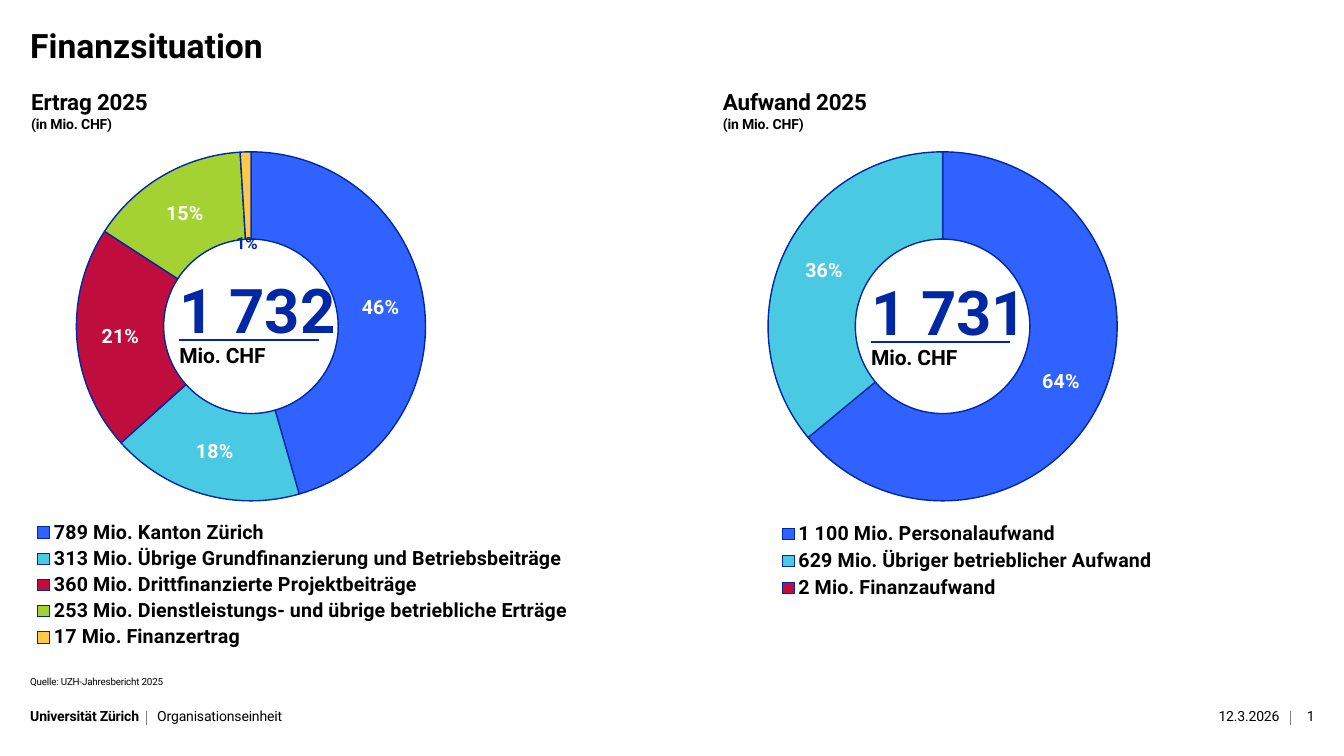
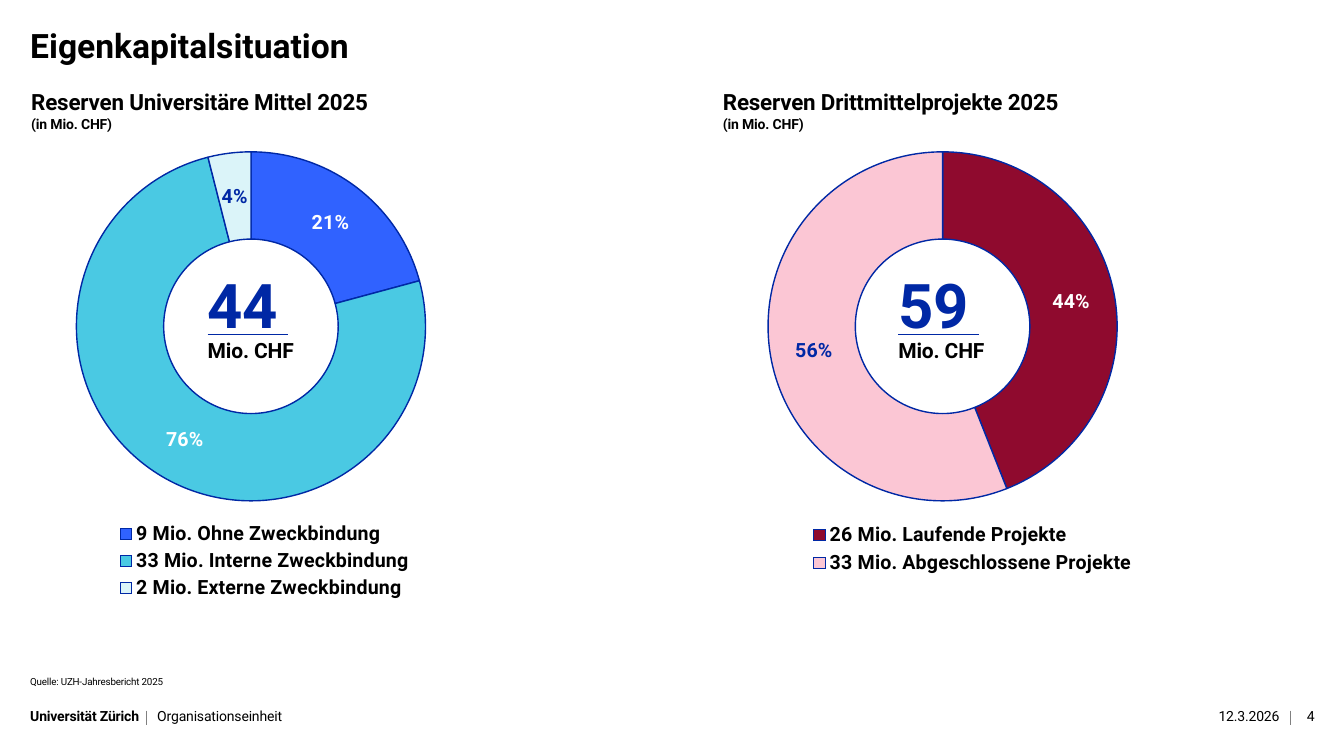
from lxml.etree import SubElement
from pptx import Presentation
from pptx.chart.data import CategoryChartData
from pptx.dml.color import RGBColor
from pptx.enum.chart import XL_CHART_TYPE, XL_LEGEND_POSITION
from pptx.enum.shapes import MSO_CONNECTOR
from pptx.enum.text import PP_ALIGN
from pptx.oxml import parse_xml
from pptx.oxml.ns import nsdecls, qn
from pptx.util import Inches, Pt

FONT = "Roboto"
COLORS = {
    "black": "000000", "white": "FFFFFF", "gray": "808080", "navy": "0028A5",
    "blue": "3062FF", "cyan": "4AC9E3", "ice": "DBF4F9", "red": "BF0D3E",
    "green": "A4D233", "yellow": "FFC845", "wine": "8F0A2E", "pink": "FBC6D4",
}
CHART_W, CHART_H = 5.43, 5.97
PANEL_LEFTS = (0.29, 7.15)
PANEL_TOP = 0.79

SLIDES = [
    {"title": "Finanzsituation", "number": "1", "panels": [
        {"heading": "Ertrag 2025", "total": "1 732", "total_at": (1.49, 1.94), "rule": 1.38,
         "legend": (0, 4.37, 5.43),
         "slices": [("789 Mio. Kanton Zürich", 46, "blue", {}),
                    ("313 Mio. Übrige Grundfinanzierung und Betriebsbeiträge", 18, "cyan", {}),
                    ("360 Mio. Drittfinanzierte Projektbeiträge", 21, "red", {}),
                    ("253 Mio. Dienstleistungs- und übrige betriebliche Erträge", 15, "green", {}),
                    ("17 Mio. Finanzertrag", 1, "yellow",
                     {"color": "navy", "size": 12, "drop": 0.08})]},
        {"heading": "Aufwand 2025", "total": "1 731", "total_at": (1.49, 1.96), "rule": 1.38,
         "legend": (0.48, 4.37, 3.9),
         "slices": [("1 100 Mio. Personalaufwand", 64, "blue", {}),
                    ("629 Mio. Übriger betrieblicher Aufwand", 36, "cyan", {}),
                    ("2 Mio. Finanzaufwand", 0, "red", {"color": "navy", "drop": 0.1})]},
    ]},
    {"title": "Eigenkapitalsituation", "number": "4", "panels": [
        {"heading": "Reserven Universitäre Mittel 2025", "total": "44", "total_at": (1.77, 1.89),
         "rule": 0.8, "legend": (0.57, 4.37, 3.6),
         "slices": [("9 Mio. Ohne Zweckbindung", 21, "blue", {}),
                    ("33 Mio. Interne Zweckbindung", 76, "cyan", {}),
                    ("2 Mio. Externe Zweckbindung", 4, "ice", {"color": "navy"})]},
        {"heading": "Reserven Drittmittelprojekte 2025", "total": "59", "total_at": (1.76, 1.89),
         "rule": 0.8, "legend": (0.68, 4.38, 3.6),
         "slices": [("26 Mio. Laufende Projekte", 44, "wine", {}),
                    ("33 Mio. Abgeschlossene Projekte", 56, "pink", {"color": "navy"})]},
    ]},
]


def rgb(name):
    """Return the palette colour of that name."""
    return RGBColor.from_string(COLORS[name])


def set_font(font, size, color="black", bold=False):
    """Set typeface, size, colour and weight of a font."""
    font.name, font.size, font.bold = FONT, Pt(size), bold
    font.color.rgb = rgb(color)


def add_text(s, box, *lines, size=10, sizes=None, color="black", bold=False,
             align=PP_ALIGN.LEFT, spacing=0.98, tracking=-10):
    """Add a text box without margins, one paragraph for each line."""
    tf = s.shapes.add_textbox(*map(Inches, box)).text_frame
    tf.word_wrap = True
    tf.margin_left = tf.margin_top = tf.margin_right = tf.margin_bottom = 0
    for i, line in enumerate(lines):
        p = tf.add_paragraph() if i else tf.paragraphs[0]
        p.alignment, p.line_spacing = align, spacing
        r = p.add_run()
        r.text = line
        set_font(r.font, sizes[i] if sizes else size, color, bold)
        r.font._element.set("spc", str(tracking))


def add_line(s, x1, y1, x2, y2, color, width):
    """Add a straight line without shadow."""
    line = s.shapes.add_connector(MSO_CONNECTOR.STRAIGHT, *map(Inches, (x1, y1, x2, y2)))
    line.line.color.rgb = rgb(color)
    line.line.width = Pt(width)
    SubElement(line._element.spPr, qn("a:effectLst"))


def manual_layout(**values):
    """Return a chart layout element with the given settings."""
    items = "".join(f'<c:{tag} val="{val}"/>' for tag, val in values.items())
    return parse_xml(f'<c:layout {nsdecls("c")}><c:manualLayout>{items}'
                     '</c:manualLayout></c:layout>')


def place_plot(chart):
    """Fix the ring's place in the chart and the size of its hole."""
    area = chart._chartSpace.chart.plotArea
    for old in area.findall(qn("c:layout")):
        area.remove(old)
    area.insert(0, manual_layout(layoutTarget="inner", xMode="edge", yMode="edge",
                                 x=0, y=0.12, w=0.81, h=0.58))
    area.find(".//" + qn("c:holeSize")).set("val", "70")


def add_legend(chart, x, y, w, rows):
    """Show the legend in a box given in inches inside the chart."""
    chart.has_legend = True
    legend = chart.legend
    legend.position = XL_LEGEND_POSITION.LEFT
    legend.include_in_layout = False
    set_font(legend.font, 14, bold=True)
    h = 0.25 * rows + 0.07
    layout = manual_layout(xMode="edge", yMode="edge",
                           x=round(x / CHART_W, 2), y=round(y / CHART_H, 2),
                           w=round(w / CHART_W, 2), h=round(h / CHART_H, 2))
    for old in legend._element.findall(qn("c:layout")):
        legend._element.remove(old)
    legend._element.find(qn("c:legendPos")).addnext(layout)


def format_slice(point, fill, color="white", size=14, drop=0):
    """Colour one slice and its label, and lower the label by a share of the chart."""
    point.format.fill.solid()
    point.format.fill.fore_color.rgb = rgb(fill)
    point.format.line.color.rgb = rgb("navy")
    point.format.line.width = Pt(1)
    font = point.data_label.font
    set_font(font, size, color, True)
    if drop:
        label = font._element.getparent().getparent().getparent().getparent()
        label.find(qn("c:idx")).addnext(manual_layout(x=0, y=drop))


def add_ring(s, left, top, slices, legend):
    """Add a doughnut chart with percentages and legend."""
    data = CategoryChartData(number_format='0"%"')
    data.categories = [name for name, *_ in slices]
    data.add_series("Series 1", [value for _, value, *_ in slices])
    chart = s.shapes.add_chart(XL_CHART_TYPE.DOUGHNUT,
                               *map(Inches, (left, top, CHART_W, CHART_H)), data).chart
    chart.has_title = False
    set_font(chart.font, 10)
    plot = chart.plots[0]
    plot.vary_by_categories = True
    plot.has_data_labels = True
    labels = plot.data_labels
    labels.show_value, labels.show_percentage = True, False
    labels.number_format, labels.number_format_is_linked = '0"%"', False
    set_font(labels.font, 14, "white", True)
    for i, (_, _, fill, label) in enumerate(slices):
        format_slice(plot.series[0].points[i], fill, **label)
    place_plot(chart)
    add_legend(chart, *legend, len(slices))


def add_total(s, left, top, total, rule):
    """Add the underlined total with its unit."""
    add_text(s, (left, top, 1.57, 0.79), total, size=44, color="navy", bold=True)
    add_text(s, (left, top + 0.68, 1.38, 0.39), "Mio. CHF", size=15, bold=True)
    add_line(s, left, top + 0.64, left + rule, top + 0.64, "navy", 1.25)


def add_panel(s, left, top, panel):
    """Add one half of a slide: heading, ring and total."""
    add_ring(s, left, top, panel["slices"], panel["legend"])
    add_text(s, (left + 0.02, top + 0.1, 5.31, 0.45), panel["heading"], "(in Mio. CHF)",
             sizes=(16, 10), bold=True)
    dx, dy = panel["total_at"]
    add_total(s, left + dx, top + dy, panel["total"], panel["rule"])


def add_footer(s, left, top, number):
    """Add source, sender, date and slide number."""
    add_text(s, (left, top - 0.32, 4, 0.12), "Quelle: UZH-Jahresbericht 2025", size=7)
    add_text(s, (left, top, 1.12, 0.17), "Universität Zürich", bold=True)
    add_text(s, (left + 1.26, top, 8.67, 0.16), "Organisationseinheit")
    add_text(s, (left + 11.09, top, 1.3, 0.16), "12.3.2026", align=PP_ALIGN.RIGHT)
    add_text(s, (left + 12.51, top, 0.23, 0.16), number, align=PP_ALIGN.RIGHT)
    for dx in (1.15, 12.5):
        add_line(s, left + dx, top + 0.02, left + dx, top + 0.16, "gray", 0.5)


def add_finance_slide(prs, title, number, panels):
    """Add a slide with title, two panels and footer."""
    s = prs.slides.add_slide(prs.slide_layouts[6])
    add_text(s, (0.3, 0.27, 12.74, 0.58), title, size=24, bold=True, spacing=0.97, tracking=0)
    for left, panel in zip(PANEL_LEFTS, panels):
        add_panel(s, left, PANEL_TOP, panel)
    add_footer(s, 0.3, 7.03, number)


def main():
    """Build and save the presentation."""
    prs = Presentation()
    prs.slide_width, prs.slide_height = Inches(13.33), Inches(7.5)
    for slide in SLIDES:
        add_finance_slide(prs, **slide)
    prs.save("out.pptx")


if __name__ == "__main__":
    main()
